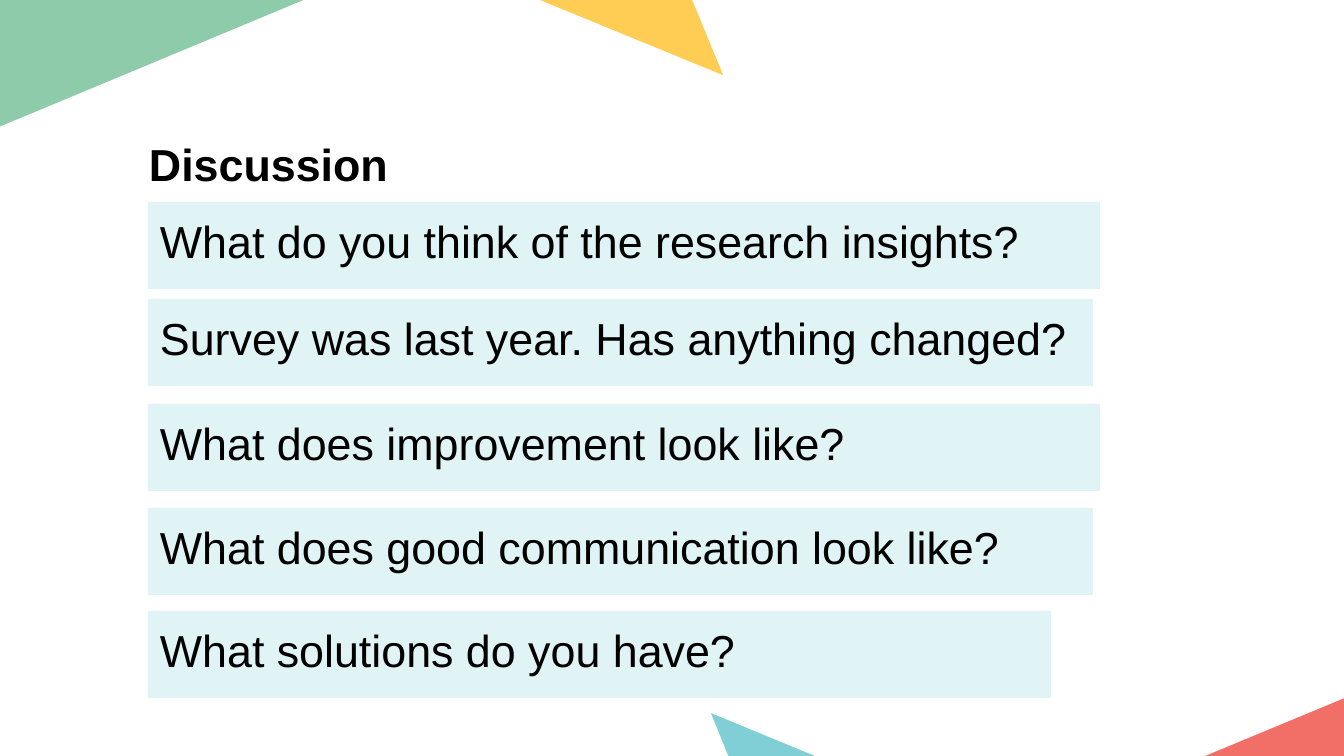
"""Build the discussion slide with its five questions and corner triangles."""
from lxml import etree
from pptx import Presentation
from pptx.dml.color import RGBColor
from pptx.enum.shapes import MSO_SHAPE as Shape
from pptx.enum.text import MSO_ANCHOR as Anchor, PP_ALIGN as Align
from pptx.oxml.ns import qn
from pptx.util import Pt

TITLE = ("Discussion", 148, 136, 249, 55)
QUESTIONS = [
    ("What do you think of the research insights?", 202, 952),
    ("Survey was last year. Has anything changed?", 299, 945),
    ("What does improvement look like?", 404, 952),
    ("What does good communication look like?", 508, 945),
    ("What solutions do you have?", 611, 903),
]
LEFT, BAR_HEIGHT, BAR_INSET = 148, 87, 12
TRIANGLES = [
    ("green", [(331, -4), (0, 134), (0, -4)], 2, 9.69),
    ("yellow", [(512, -4), (736, 88), (698, -4)], 3, 9.69),
    ("teal", [(851, 762), (696, 698), (722, 762)], 3, 11.54),
    ("red", [(1345, 689), (1174, 760), (1345, 760)], 2, 11.54),
]
THEME = {
    "font": "Arial", "size": 32, "bar_alpha": 24,
    "text": "000000", "edge": "FFFFFF",
    "green": "8DCBAA", "yellow": "FFCD54", "teal": "81CFD6", "red": "F26F67",
}
SCALE = 914400 / 100.8


def px(n):
    return round(n * SCALE)


def color(name):
    return RGBColor.from_string(THEME[name])


def paint(sp, name):
    sp.fill.solid()
    sp.fill.fore_color.rgb = color(name)
    sp.line.fill.background()
    sp.shadow.inherit = False


def outline(s, points, close):
    builder = s.shapes.build_freeform(*points[0], scale=SCALE)
    builder.add_line_segments(points[1:], close=close)
    return builder.convert_to_shape()


def add_triangle(s, name, points, edge_points, width):
    paint(outline(s, points, True), name)
    edge = outline(s, points[:edge_points], False)
    edge.fill.background()
    edge.line.color.rgb = color("edge")
    edge.line.width = Pt(width)
    edge.shadow.inherit = False


def write(sp, text, insets, bold=False):
    tf = sp.text_frame
    tf.word_wrap = True
    tf.vertical_anchor = Anchor.TOP
    tf.margin_left, tf.margin_top, tf.margin_right, tf.margin_bottom = map(px, insets)
    p = tf.paragraphs[0]
    p.text = text
    p.alignment = Align.LEFT
    p.font.name = THEME["font"]
    p.font.size = Pt(THEME["size"])
    p.font.bold = bold
    p.font.color.rgb = color("text")


def add_question(s, text, top, width):
    sp = s.shapes.add_shape(Shape.RECTANGLE, px(LEFT), px(top), px(width), px(BAR_HEIGHT))
    paint(sp, "teal")
    fill = sp.element.spPr.find(qn("a:solidFill"))
    etree.SubElement(fill[0], qn("a:alpha"), val=str(THEME["bar_alpha"] * 1000))
    write(sp, text, [BAR_INSET] * 4)


def main():
    prs = Presentation()
    prs.slide_width, prs.slide_height = px(1344), px(756)
    s = prs.slides.add_slide(prs.slide_layouts[6])
    for triangle in TRIANGLES:
        add_triangle(s, *triangle)
    title, *box = TITLE
    write(s.shapes.add_textbox(*map(px, box)), title, (1, 1, 0, 0), bold=True)
    for question in QUESTIONS:
        add_question(s, *question)
    prs.save("out.pptx")


if __name__ == "__main__":
    main()
